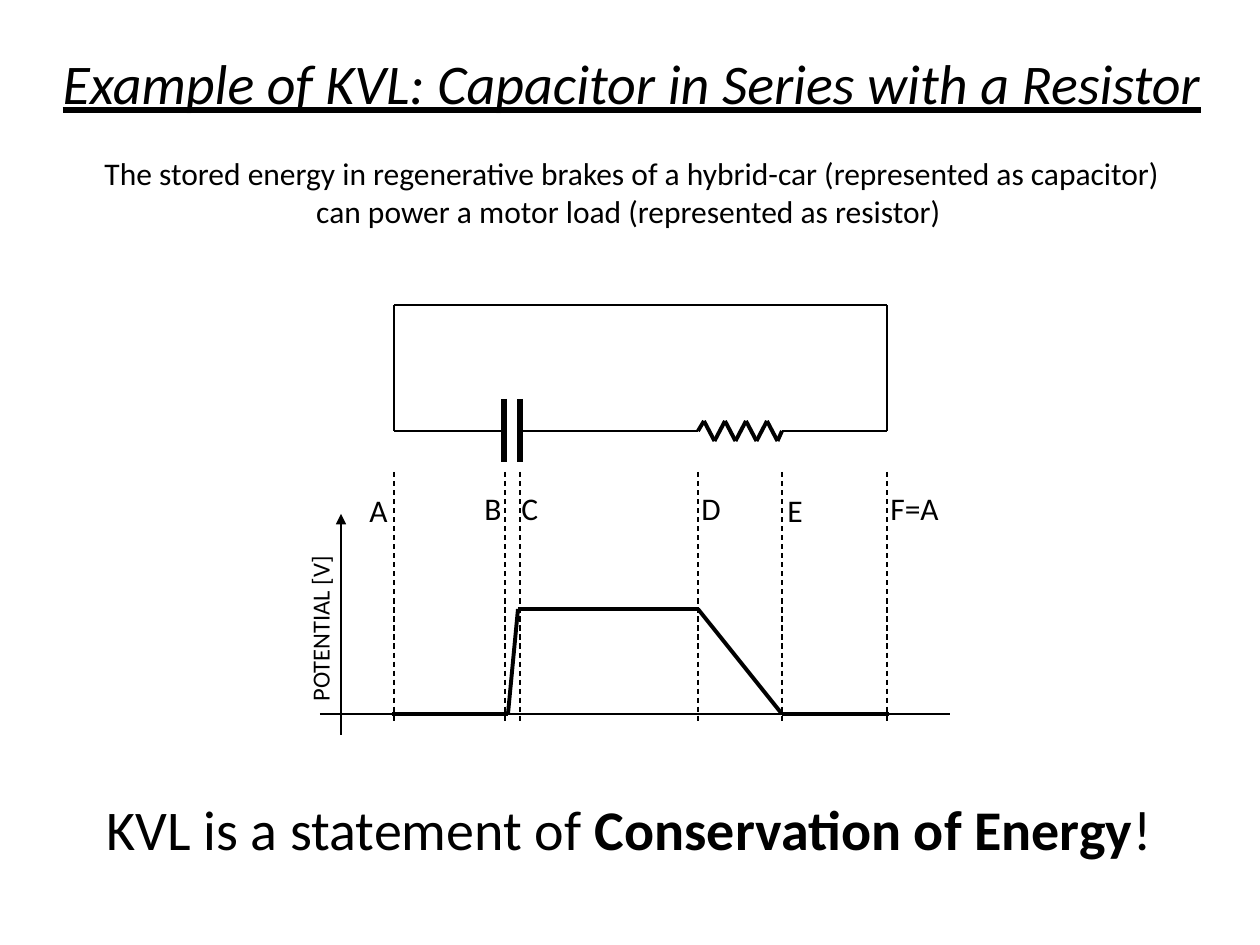
from itertools import pairwise
from lxml import etree
from pptx import Presentation
from pptx import util as u
from pptx.dml.color import RGBColor
from pptx.enum import dml, text
from pptx.oxml.ns import qn

BLACK = RGBColor(0, 0, 0)
FONT = "Calibri"
SCALE = 914400 / 126


def px(n):
    return u.Emu(round(n * SCALE))


class Sheet:
    def __init__(self, deck):
        self.slide = deck.slides.add_slide(deck.slide_layouts[6])
        self.host = self.slide.shapes

    def group(self):
        """Send the next lines into a new group."""
        self.host = self.slide.shapes.add_group_shape().shapes

    def free(self):
        """Send the next lines straight onto the slide."""
        self.host = self.slide.shapes

    def line(self, start, end, width, dash=None, head=False):
        wire = self.host.add_connector(1, *map(px, (*start, *end)))
        wire.line.color.rgb = BLACK
        wire.line.width = u.Pt(width)
        if dash:
            wire.line.dash_style = dash
        if head:
            etree.SubElement(wire.line._get_or_add_ln(), qn("a:tailEnd"), type="triangle")
        etree.SubElement(wire._element.spPr, qn("a:effectLst"))

    def chain(self, points, width):
        """Join the points, each to the next."""
        for start, end in pairwise(points):
            self.line(start, end, width)

    def label(self, box, lines, size=18, wrap=False, turn=0, align=None):
        """Each line is a list of (words, font values) runs."""
        shape = self.slide.shapes.add_textbox(*map(px, box))
        shape.rotation = turn
        frame = shape.text_frame
        frame.word_wrap = wrap
        frame.auto_size = text.MSO_AUTO_SIZE.SHAPE_TO_FIT_TEXT
        for i, runs in enumerate(lines):
            para = frame.add_paragraph() if i else frame.paragraphs[0]
            para.alignment = align
            for words, extra in runs:
                run = para.add_run()
                run.text = words
                run.font.color.rgb = BLACK
                style = {"name": FONT, "size": u.Pt(size), **extra}
                for key, value in style.items():
                    setattr(run.font, key, value)
        return frame


def main():
    deck = Presentation()
    deck.slide_width, deck.slide_height = px(1260), px(945)
    sheet = Sheet(deck)

    # Node positions shared by the circuit and the graph
    a, b, c, d, e, f = 394, 505, 520, 698, 782, 887
    top, mid, high, zero = 305, 431, 609, 714

    # Resistor
    sheet.group()
    peaks = [(d + 6 + 10.5 * i, mid + (10 if i % 2 else -10)) for i in range(8)]
    sheet.chain([(d, mid), *peaks, (e, mid)], 2.25)
    sheet.free()

    # Capacitor and wires
    for x in (b - 1, c):
        sheet.line((x, mid - 32), (x, mid + 31), 3)
    sheet.line((d, mid), (c, mid), 1.5)
    sheet.chain([(e, mid), (f, mid), (f, top), (a, top), (a, mid), (b - 3, mid)], 1.5)

    nodes = [("A", 357, 485, 44), ("B", 472, 483, 43), ("C", 509, 483, 44),
             ("D", 689, 483, 44), ("E", 775, 485, 43), ("F=A", 878, 483, 77)]
    for name, x, y, wide in nodes:
        sheet.label((x, y, wide, 50), [[(name, {})]])

    # Potential graph
    sheet.line((320, zero), (950, zero), 0.75)
    sheet.group()
    for x in (a, b, c, d, e, f):
        sheet.line((x, 472), (x, 724), 0.75, dash=dml.MSO_LINE.DASH)
    sheet.free()
    sheet.chain([(a - 2, zero), (b + 3, zero), (c - 2, high), (d, high),
                 (e, zero), (f + 2, zero)], 2.25)
    sheet.line((341, 735), (341, 514), 0.75, head=True)
    sheet.label((227, 600, 186, 42), [[("POTENTIAL [V]", {})]], 14, turn=270)

    # Heading and closing statement
    title = {"size": u.Pt(32), "italic": True, "underline": True}
    frame = sheet.label((44, 42, 1176, 195), [
        [("Example of KVL: Capacitor in Series with a Resistor", title)],
        [("The stored energy in regenerative brakes of a hybrid-car "
          "(represented as capacitor)", {})],
        [("can power a motor load (represented as resistor) ", {})],
    ], align=text.PP_ALIGN.CENTER)
    frame.paragraphs[1].space_before = u.Pt(22)
    sheet.label((94, 788, 1071, 81), [[
        ("KVL is a statement of ", {}),
        ("Conservation of Energy", {"bold": True}),
        ("!", {}),
    ]], 32, wrap=True)

    deck.save("out.pptx")


if __name__ == "__main__":
    main()
